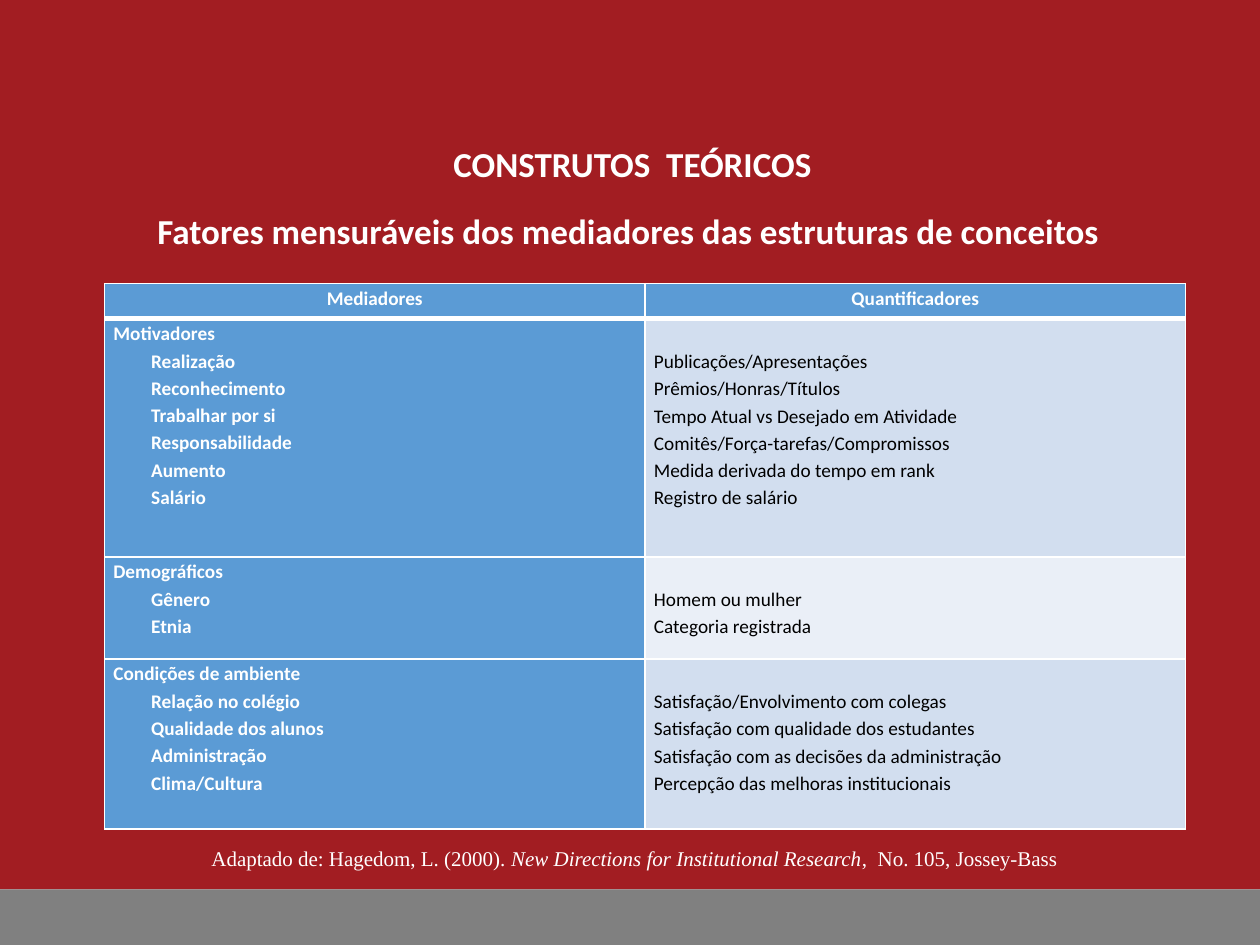
from lxml import etree
from pptx import Presentation, util as u
from pptx.dml.color import RGBColor
from pptx.enum import shapes, text
from pptx.oxml import ns

RED = RGBColor(0xA2, 0x1D, 0x22)
GRAY = RGBColor(0x80, 0x80, 0x80)
WHITE = RGBColor(0xFF, 0xFF, 0xFF)
BLACK = RGBColor(0x00, 0x00, 0x00)
BLUE = RGBColor(0x5B, 0x9B, 0xD5)
BANDS = [RGBColor(0xD2, 0xDE, 0xEF), RGBColor(0xEA, 0xEF, 0xF7)]

CENTER = text.PP_ALIGN.CENTER
LEFT = text.PP_ALIGN.LEFT
JUSTIFY = text.PP_ALIGN.JUSTIFY

HEADINGS = ["Mediadores", "Quantificadores"]
GROUPS = [
    ("Motivadores", 1.89, [
        ("Realização", "Publicações/Apresentações"),
        ("Reconhecimento", "Prêmios/Honras/Títulos"),
        ("Trabalhar por si", "Tempo Atual vs Desejado em Atividade"),
        ("Responsabilidade", "Comitês/Força-tarefas/Compromissos"),
        ("Aumento", "Medida derivada do tempo em rank"),
        ("Salário", "Registro de salário"),
    ]),
    ("Demográficos", 0.81, [
        ("Gênero", "Homem ou mulher"),
        ("Etnia", "Categoria registrada"),
    ]),
    ("Condições de ambiente", 1.35, [
        ("Relação no colégio", "Satisfação/Envolvimento com colegas"),
        ("Qualidade dos alunos", "Satisfação com qualidade dos estudantes"),
        ("Administração", "Satisfação com as decisões da administração"),
        ("Clima/Cultura", "Percepção das melhoras institucionais"),
    ]),
]
HEADER_HEIGHT = 0.28
LINE_HEIGHT = 0.22


def write(frame, content, size=11, font="Calibri", color=WHITE, bold=False, italic=False,
          align=None, spacing=None, before=None, indent=0, same_line=False):
    """Add a paragraph to the frame, or a run to its last paragraph."""
    paragraph = frame.paragraphs[-1]
    if not same_line:
        if paragraph.runs:
            paragraph = frame.add_paragraph()
        if indent:
            paragraph._p.get_or_add_pPr().set("marL", str(u.Inches(indent)))
        paragraph.alignment = align
        paragraph.line_spacing = spacing
        paragraph.space_before = before
    run = paragraph.add_run()
    run.text = content
    run.font.size, run.font.name = u.Pt(size), font
    run.font.bold, run.font.italic = bold, italic
    run.font.color.rgb = color


def set_borders(cell, **widths):
    """Draw white cell borders, with widths in points by side: L, R, T, B."""
    properties = cell._tc.get_or_add_tcPr()
    for side, width in widths.items():
        line = etree.SubElement(properties, ns.qn(f"a:ln{side}"), w=str(u.Pt(width)))
        fill = etree.SubElement(line, ns.qn("a:solidFill"))
        etree.SubElement(fill, ns.qn("a:srgbClr"), val=str(WHITE))


class SlideBuilder:
    def __init__(self, slide):
        self.slide = slide

    def band(self, top, height, color):
        shape = self.slide.shapes.add_shape(
            shapes.MSO_SHAPE.RECTANGLE, 0, u.Inches(top), u.Inches(10), u.Inches(height))
        shape.shadow.inherit = False
        shape.fill.solid()
        shape.fill.fore_color.rgb = color
        shape.line.fill.background()

    def textbox(self, *box):
        frame = self.slide.shapes.add_textbox(*map(u.Inches, box)).text_frame
        frame.word_wrap = True
        return frame

    def table(self, left, top, width, heights):
        total = u.Inches(sum(heights))
        table = self.slide.shapes.add_table(
            len(heights), 2, u.Inches(left), u.Inches(top), u.Inches(width), total).table
        for row, height in zip(table.rows, heights):
            row.height = u.Inches(height)
        return table

    def cell(self, table, row, column, fill):
        cell = table.cell(row, column)
        cell.margin_left = cell.margin_right = u.Inches(0.07)
        cell.margin_top = cell.margin_bottom = 0
        set_borders(cell, L=1, R=1, T=3 if row == 1 else 1, B=3 if row == 0 else 1)
        cell.fill.solid()
        cell.fill.fore_color.rgb = fill
        return cell


def main():
    presentation = Presentation()
    presentation.slide_width, presentation.slide_height = u.Inches(10), u.Inches(7.5)
    builder = SlideBuilder(presentation.slides.add_slide(presentation.slide_layouts[6]))

    builder.band(0, 7.06, RED)
    builder.band(7.06, 0.44, GRAY)

    title = builder.textbox(1.15, 1.08, 7.74, 0.98)
    write(title, "CONSTRUTOS  TEÓRICOS", size=20, bold=True, align=CENTER)
    write(title, "Fatores mensuráveis dos mediadores das estruturas de conceitos",
          size=20, bold=True, align=LEFT, before=u.Pt(14.5))

    credit = builder.textbox(1.06, 6.66, 7.95, 0.3)
    style = {"size": 12, "font": "Times New Roman"}
    write(credit, "Adaptado de: Hagedom, L. (2000). ", align=CENTER, **style)
    write(credit, "New Directions for Institutional Research", italic=True,
          same_line=True, **style)
    write(credit, ",  No. 105, Jossey-Bass", same_line=True, **style)

    heights = [HEADER_HEIGHT] + [height for _, height, _ in GROUPS]
    table = builder.table(0.83, 2.25, 8.58, heights)
    for column, heading in enumerate(HEADINGS):
        cell = builder.cell(table, 0, column, BLUE)
        write(cell.text_frame, heading, bold=True, align=CENTER, spacing=1.15)

    body = {"align": JUSTIFY, "spacing": 1.15}
    for row, (group, _, factors) in enumerate(GROUPS, start=1):
        mediators = builder.cell(table, row, 0, BLUE)
        measures = builder.cell(table, row, 1, BANDS[(row - 1) % 2])
        measures.margin_top = u.Inches(LINE_HEIGHT)  # level with the first factor
        write(mediators.text_frame, group, bold=True, **body)
        for mediator, measure in factors:
            write(mediators.text_frame, mediator, bold=True, indent=0.3, **body)
            write(measures.text_frame, measure, color=BLACK, **body)

    presentation.save("out.pptx")


if __name__ == "__main__":
    main()
